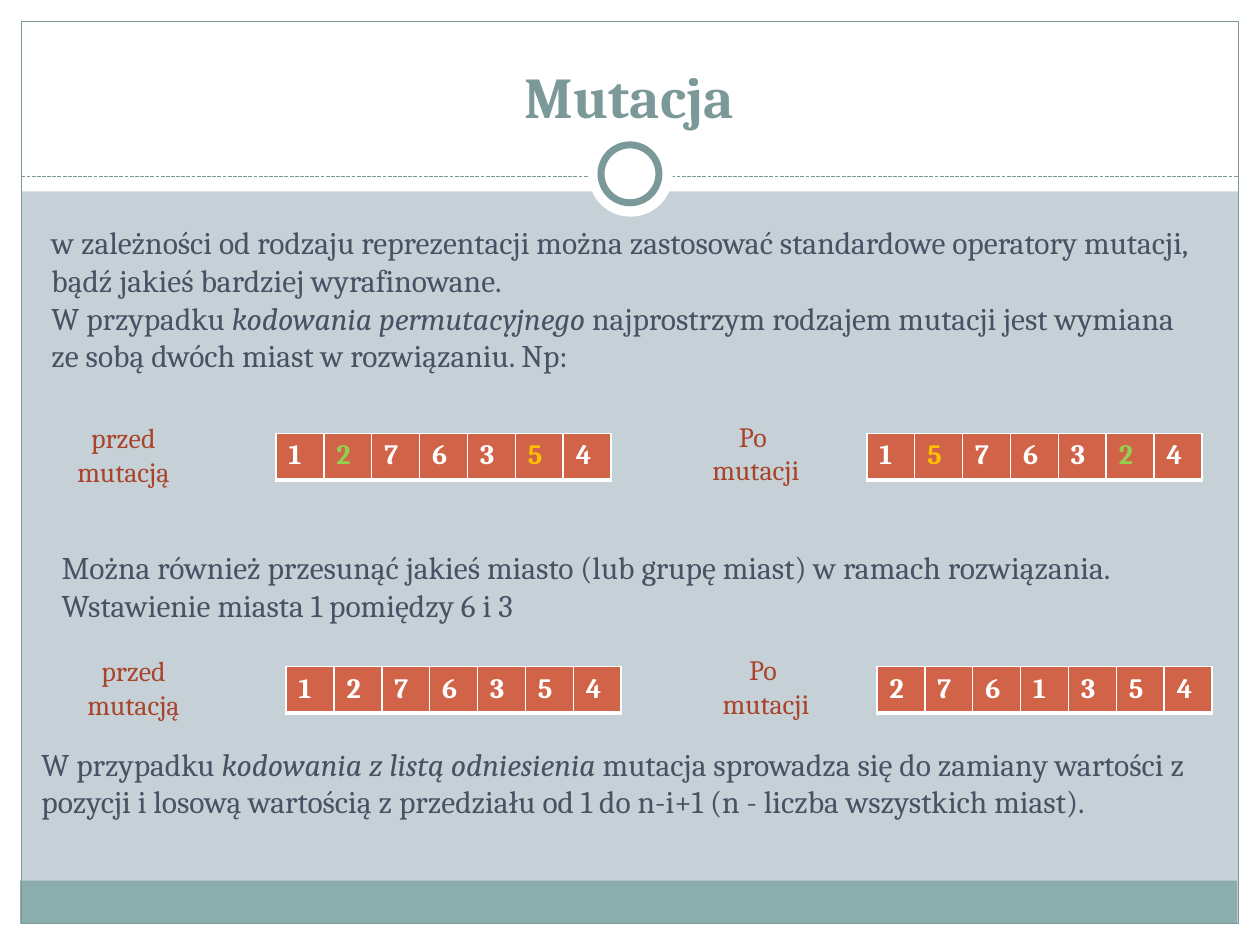
from dataclasses import dataclass

import pptx
import pptx.dml.color
import pptx.enum.dml
import pptx.enum.shapes
import pptx.enum.text
import pptx.oxml
import pptx.oxml.ns
import pptx.util
from pptx.util import Inches

KIND = pptx.enum.shapes.MSO_SHAPE
ALIGN = pptx.enum.text.PP_ALIGN


@dataclass(frozen=True)
class Theme:
    font: str = "Cambria"
    back: str = "C5D1D7"
    white: str = "FFFFFF"
    teal: str = "7C999A"
    band: str = "8CADAE"
    ink: str = "4B5064"
    rust: str = "A9432B"
    cell: str = "D16349"
    green: str = "92D050"
    amber: str = "FFC000"
    head: int = 33
    body: int = 18
    small: int = 16


@dataclass(frozen=True)
class Box:
    left: float
    top: float
    width: float
    height: float

    def emu(self) -> list:
        return [Inches(v) for v in (self.left, self.top, self.width, self.height)]


@dataclass(frozen=True)
class Step:
    """One before-and-after pair of city orders."""
    left: float
    top: float
    old: str
    new: str
    marks: dict


THEME = Theme()
SWAP = Step(0.48, 3.28, "1276354", "1576324",
            {"2": THEME.green, "5": THEME.amber})
SHIFT = Step(0.56, 5.13, "1276354", "2761354", {})


def color(code: str):
    return pptx.dml.color.RGBColor.from_string(code)


def write(frame, text: str, *, size: int = THEME.body, ink: str = THEME.ink,
          bold: bool = False, align=None) -> None:
    """Fill a text frame; newlines part paragraphs, asterisks wrap italics."""
    for i, line in enumerate(text.split("\n")):
        para = frame.paragraphs[0] if i == 0 else frame.add_paragraph()
        para.alignment = align
        for j, piece in enumerate(line.split("*")):
            run = para.add_run()
            run.text = piece
            font = run.font
            font.name, font.size = THEME.font, pptx.util.Pt(size)
            font.bold, font.italic = bold, j % 2 == 1
            font.color.rgb = color(ink)


def note(slide, box: Box, text: str, wrap: bool = True, **form) -> None:
    frame = slide.shapes.add_textbox(*box.emu()).text_frame
    frame.word_wrap = wrap
    frame.auto_size = pptx.enum.text.MSO_AUTO_SIZE.SHAPE_TO_FIT_TEXT
    write(frame, text, **form)


def shape(slide, kind, box: Box, fill: str = "", line: str = "",
          width: float = 0.75) -> None:
    item = slide.shapes.add_shape(kind, *box.emu())
    item.shadow.inherit = False
    if fill:
        item.fill.solid()
        item.fill.fore_color.rgb = color(fill)
    else:
        item.fill.background()
    if line:
        item.line.color.rgb = color(line)
        item.line.width = pptx.util.Pt(width)
    else:
        item.line.fill.background()


def border(cell) -> None:
    """White edges, thicker at the bottom, placed ahead of the cell fill."""
    props = cell._tc.get_or_add_tcPr()
    space = pptx.oxml.ns.nsdecls("a")
    for i, (side, width) in enumerate((("L", 1), ("R", 1), ("T", 1), ("B", 3))):
        props.insert(i, pptx.oxml.parse_xml(
            f'<a:ln{side} {space} w="{pptx.util.Pt(width)}"><a:solidFill>'
            f'<a:srgbClr val="{THEME.white}"/></a:solidFill></a:ln{side}>'))


def genes(slide, left: float, top: float, order: str, marks: dict) -> None:
    box = Box(left, top, 2.66, 0.37)
    table = slide.shapes.add_table(1, len(order), *box.emu()).table
    table.first_row = table.horz_banding = False
    for i, city in enumerate(order):
        cell = table.cell(0, i)
        cell.fill.solid()
        cell.fill.fore_color.rgb = color(THEME.cell)
        border(cell)
        write(cell.text_frame, city, size=THEME.small, bold=True,
              ink=marks.get(city, THEME.white))


def pair(slide, step: Step) -> None:
    form = dict(wrap=False, size=THEME.small, ink=THEME.rust, align=ALIGN.CENTER)
    left, top = step.left, step.top
    note(slide, Box(left, top + 0.01, 1, 0.64), "przed\nmutacją", **form)
    genes(slide, left + 1.71, top + 0.16, step.old, step.marks)
    note(slide, Box(left + 4.99, top, 1.01, 0.64), "Po\n mutacji", **form)
    genes(slide, left + 6.4, top + 0.16, step.new, step.marks)


def frame(slide) -> None:
    # White margins, head and footer band
    for box in (Box(0, 7.33, 10, 0.17), Box(0, 0, 10, 1.52),
                Box(0, 0, 0.17, 7.5), Box(9.83, 0, 0.17, 7.5)):
        shape(slide, KIND.RECTANGLE, box, THEME.white)
    shape(slide, KIND.RECTANGLE, Box(0.16, 6.99, 9.66, 0.34), THEME.band)
    shape(slide, KIND.RECTANGLE, Box(0.17, 0.17, 9.66, 7.16), line=THEME.teal)

    # Dashed rule
    rule = slide.shapes.add_connector(
        pptx.enum.shapes.MSO_CONNECTOR.STRAIGHT,
        Inches(0.17), Inches(1.4), Inches(9.83), Inches(1.4))
    rule.line.color.rgb = color(THEME.teal)
    rule.line.width = pptx.util.Pt(0.75)
    rule.line.dash_style = pptx.enum.dml.MSO_LINE.SQUARE_DOT
    rule._element.spPr.append(pptx.oxml.parse_xml(
        f'<a:effectLst {pptx.oxml.ns.nsdecls("a")}/>'))

    # Ring on the rule
    shape(slide, KIND.OVAL, Box(4.67, 1.05, 0.67, 0.67), THEME.white)
    shape(slide, KIND.OVAL, Box(4.77, 1.15, 0.46, 0.46), THEME.white,
          THEME.teal, 4)


def main() -> None:
    deck = pptx.Presentation()
    deck.slide_width, deck.slide_height = Inches(10), Inches(7.5)
    slide = deck.slides.add_slide(deck.slide_layouts[5])
    slide.background.fill.solid()
    slide.background.fill.fore_color.rgb = color(THEME.back)
    frame(slide)

    # Title, lifted above the white head
    title = slide.shapes.title
    title.left, title.top, title.width, title.height = Box(
        0.33, 0.25, 9.33, 0.83).emu()
    title.text_frame.vertical_anchor = pptx.enum.text.MSO_ANCHOR.BOTTOM
    write(title.text_frame, "Mutacja", size=THEME.head, ink=THEME.teal,
          bold=True, align=ALIGN.CENTER)
    slide.shapes._spTree.append(title._element)

    # Swapping two cities
    note(slide, Box(0.31, 1.72, 9.22, 1.31),
         "w zależności od rodzaju reprezentacji można zastosować standardowe "
         "operatory mutacji, bądź jakieś bardziej wyrafinowane.\n"
         "W przypadku *kodowania permutacyjnego *najprostrzym rodzajem mutacji "
         "jest wymiana ze sobą dwóch miast w rozwiązaniu. Np:")
    pair(slide, SWAP)

    # Moving one city
    note(slide, Box(0.39, 4.3, 9.14, 0.71),
         "Można również przesunąć jakieś miasto (lub grupę miast) w ramach "
         "rozwiązania.\nWstawienie miasta 1 pomiędzy 6 i 3")
    pair(slide, SHIFT)

    # Reference list coding
    note(slide, Box(0.23, 5.86, 9.45, 1.01),
         "W przypadku *kodowania z listą odniesienia* mutacja sprowadza się do "
         "zamiany wartości z pozycji i losową wartością z przedziału od 1 do "
         "n-i+1 (n - liczba wszystkich miast).")
    deck.save("out.pptx")


if __name__ == "__main__":
    main()
